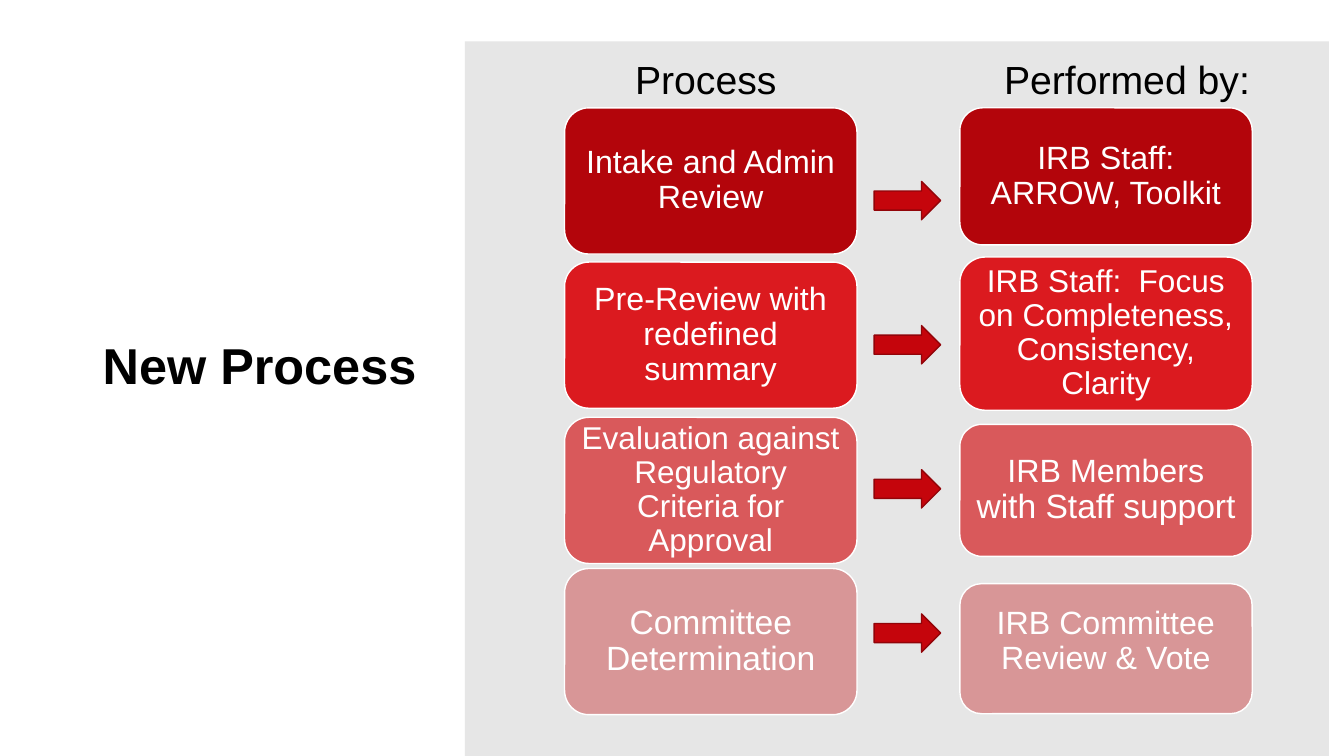
import pptx
import pptx.util
import pptx.dml.color
import pptx.enum.shapes
import pptx.enum.text

Inches = pptx.util.Inches
Shapes = pptx.enum.shapes.MSO_SHAPE
Align = pptx.enum.text.PP_ALIGN


def paint(format_part, hex_color):
    if hasattr(format_part, "solid"):
        format_part.solid()
        format_part = format_part.fore_color
    format_part.rgb = pptx.dml.color.RGBColor.from_string(hex_color)


def write(holder, runs, color, align, bold=False, bottom=0.05):
    frame = holder.text_frame
    frame.word_wrap = True
    frame.vertical_anchor = pptx.enum.text.MSO_ANCHOR.MIDDLE
    frame.margin_left = frame.margin_right = Inches(0.1)
    frame.margin_top, frame.margin_bottom = Inches(0.05), Inches(bottom)
    paragraph = frame.paragraphs[0]
    paragraph.alignment = align
    paragraph.line_spacing = 0.9
    for words, size in runs:
        run = paragraph.add_run()
        run.text = words
        run.font.name = "Arial"
        run.font.size = pptx.util.Pt(size)
        run.font.bold = bold
        paint(run.font.color, color)


deck = pptx.Presentation()
deck.slide_width, deck.slide_height = Inches(13.33), Inches(7.5)
slide = deck.slides.add_slide(deck.slide_layouts[6])

title = slide.shapes.add_textbox(Inches(0.92), Inches(0.61), Inches(3.69), Inches(6.09))
write(title, [("New Process", 36)], "000000", Align.LEFT, bold=True)

panel = slide.shapes.add_shape(
    Shapes.RECTANGLE, Inches(4.61), Inches(0.41), Inches(8.57), Inches(7.09))
panel.shadow.inherit = False
paint(panel.fill, "E6E6E6")
panel.line.fill.background()

step_colors = ["B3050B", "DB1A1F", "D9595B", "D89697"]
box_width = 2.9
columns = [
    ("Process", 6.2, 2.1, 5.6, [
        (1.07, 1.45, [("Intake and Admin Review", 23)]),
        (2.6, 1.45, [("Pre-Review with redefined summary", 23)]),
        (4.14, 1.45, [("Evaluation against Regulatory Criteria for Approval", 22.5)]),
        (5.64, 1.45, [("Committee Determination", 24)]),
    ]),
    ("Performed by:", 9.86, 2.8, 9.52, [
        (1.07, 1.36, [("IRB Staff: ARROW, Toolkit", 23)]),
        (2.55, 1.52, [("IRB Staff:  Focus on Completeness, Consistency, Clarity", 22.5)]),
        (4.21, 1.31, [("IRB Members ", 23), ("with Staff support", 24)]),
        (5.79, 1.29, [("IRB Committee Review & Vote", 23)]),
    ]),
]

for heading, heading_left, heading_width, box_left, steps in columns:
    header = slide.shapes.add_textbox(
        Inches(heading_left), Inches(0.53), Inches(heading_width), Inches(0.57))
    write(header, [(heading, 28)], "000000", Align.LEFT)
    for (top, height, runs), color in zip(steps, step_colors):
        step = slide.shapes.add_shape(
            Shapes.ROUNDED_RECTANGLE, Inches(box_left), Inches(top),
            Inches(box_width), Inches(height))
        step.shadow.inherit = False
        paint(step.fill, color)
        paint(step.line.fill, "FFFFFF")
        step.line.width = pptx.util.Pt(1)
        raised = runs[0][0].startswith("IRB Committee")
        write(step, runs, "FFFFFF", Align.CENTER, bottom=0.19 if raised else 0.05)

arrow_top, arrow_pitch = 1.8, 1.43
for row in range(len(step_colors)):
    arrow = slide.shapes.add_shape(
        Shapes.RIGHT_ARROW, Inches(8.67), Inches(arrow_top + row * arrow_pitch),
        Inches(0.66), Inches(0.38))
    arrow.shadow.inherit = False
    paint(arrow.fill, "C5050C")
    paint(arrow.line.fill, "920409")
    arrow.line.width = pptx.util.Pt(1)

deck.save("out.pptx")
